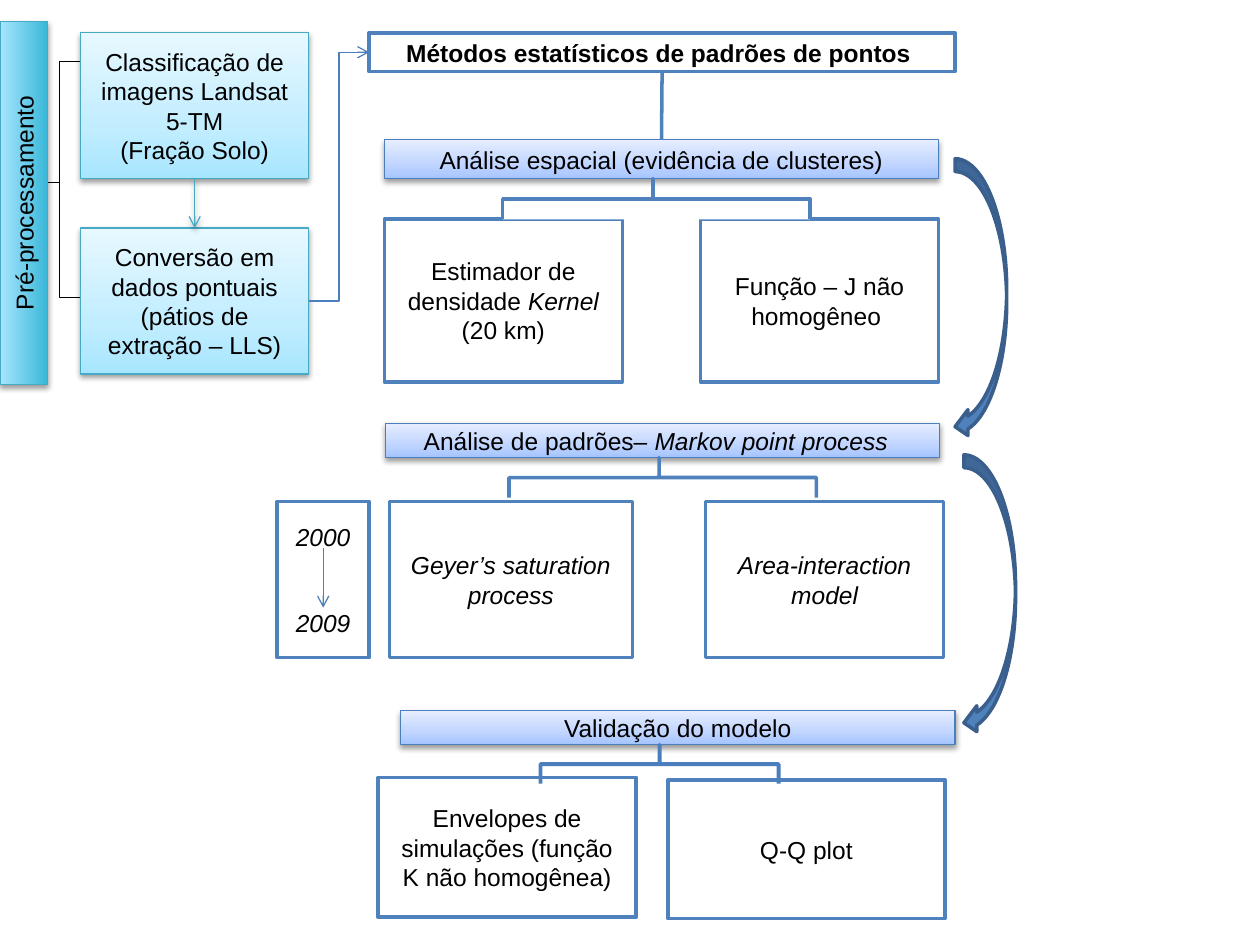
import pptx
import pptx.util
from lxml import etree
from copy import deepcopy
from pptx.dml.color import RGBColor
from pptx.enum.shapes import MSO_CONNECTOR, MSO_SHAPE
from pptx.enum.text import MSO_ANCHOR, PP_ALIGN
from pptx.oxml.ns import qn

BLACK = RGBColor(0x00, 0x00, 0x00)
WHITE = RGBColor(0xFF, 0xFF, 0xFF)
BLUE = RGBColor(0x4F, 0x81, 0xBD)
MID_BLUE = RGBColor(0x4B, 0x7E, 0xBC)
DARK_BLUE = RGBColor(0x3A, 0x5F, 0x8C)
TEAL = RGBColor(0x46, 0xAA, 0xC5)
# Gradient stops from bottom to top: (position, colour)
AQUA_STOPS = [(0, RGBColor(0xA7, 0xE6, 0xFF)), (0.35, RGBColor(0xC1, 0xED, 0xFF)),
              (1, RGBColor(0xE7, 0xF8, 0xFF))]
BLUE_STOPS = [(0, RGBColor(0xA4, 0xC4, 0xFF)), (0.35, RGBColor(0xBF, 0xD4, 0xFF)),
              (1, RGBColor(0xE6, 0xEE, 0xFF))]
DEEP_STOPS = [(0, RGBColor(0x39, 0xB7, 0xD8)), (1, RGBColor(0xA7, 0xE6, 0xFF))]

COLS, ROWS = 100, 75
WIDTH, HEIGHT = pptx.util.Inches(10), pptx.util.Inches(7.5)


def grid(x, y, w, h):
    """Turn columns and rows into slide lengths."""
    return [round(v * size / n) for v, size, n in
            ((x, WIDTH, COLS), (y, HEIGHT, ROWS), (w, WIDTH, COLS), (h, HEIGHT, ROWS))]


def turned(x, y, w, h):
    """Box that covers (x, y, w, h) after a quarter turn."""
    return x + (w - h) / 2, y + (h - w) / 2, h, w


def set_effects(shape, shadow=False):
    spPr = shape.element.spPr
    effects = spPr.find(qn("a:effectLst"))
    if effects is None:
        effects = etree.SubElement(spPr, qn("a:effectLst"))
    if shadow:
        outer = etree.SubElement(effects, qn("a:outerShdw"), blurRad="40000", dist="20000",
                                 dir="5400000", rotWithShape="0")
        color = etree.SubElement(outer, qn("a:srgbClr"), val=str(BLACK))
        etree.SubElement(color, qn("a:alpha"), val="38000")


def paint(shape, fill, line, width):
    """Fill with a colour, a list of gradient stops, or nothing."""
    if fill is None:
        shape.fill.background()
    elif isinstance(fill, list):
        shape.fill.gradient()
        shape.fill.gradient_angle = 90
        gs_lst = shape.element.spPr.find(".//" + qn("a:gsLst"))
        while len(gs_lst) < len(fill):
            gs_lst.append(deepcopy(gs_lst[0]))
        for stop, (position, color) in zip(shape.fill.gradient_stops, fill):
            stop.position, stop.color.rgb = position, color
    else:
        shape.fill.solid()
        shape.fill.fore_color.rgb = fill
    shape.line.color.rgb = line
    shape.line.width = pptx.util.Pt(width)
    set_effects(shape, shadow=isinstance(fill, list))


def write(shape, text, bold=False):
    """Centred text; asterisks switch italics on and off."""
    tf = shape.text_frame
    tf.word_wrap = True
    tf.vertical_anchor = MSO_ANCHOR.MIDDLE
    for i, line in enumerate(text.split("\n")):
        p = tf.add_paragraph() if i else tf.paragraphs[0]
        p.alignment = PP_ALIGN.CENTER
        p.font.name, p.font.size, p.font.bold = "Arial", pptx.util.Pt(14), bold
        p.font.color.rgb = BLACK
        for j, part in enumerate(line.split("*")):
            if part:
                r = p.add_run()
                r.text = part
                if j % 2:
                    r.font.italic = True


def add_box(s, box, text, fill=WHITE, line=BLUE, width=2):
    sp = s.shapes.add_shape(MSO_SHAPE.RECTANGLE, *grid(*box))
    paint(sp, fill, line, width)
    write(sp, text)
    return sp


def add_bracket(s, box, line, width, tip=0.512, fill=None, rotation=0):
    sp = s.shapes.add_shape(MSO_SHAPE.LEFT_BRACE, *grid(*(turned(*box) if rotation else box)))
    sp.rotation = rotation
    sp.adjustments[0], sp.adjustments[1] = 0, tip
    paint(sp, fill, line, width)


def add_link(s, line, width, start=None, end=None, points=(0, 0, 0, 0),
             kind=MSO_CONNECTOR.STRAIGHT, arrow=True, shadow=False):
    """Connector between (shape, side) pairs or between two grid points."""
    c = s.shapes.add_connector(kind, *grid(*points))
    if start:
        c.begin_connect(*start)
        c.end_connect(*end)
    c.line.color.rgb = line
    c.line.width = pptx.util.Pt(width)
    if arrow:
        etree.SubElement(c.line._get_or_add_ln(), qn("a:tailEnd"), type="arrow")
    set_effects(c, shadow)


def add_title(s, box, text):
    title = s.shapes.title
    title.left, title.top, title.width, title.height = grid(*box)
    paint(title, WHITE, BLUE, 2)
    write(title, text, bold=True)
    return title


def add_preprocessing(s, box):
    """Side label, bracket and two steps; returns the last step."""
    x, y, w, h = box
    add_bracket(s, (x + 2.4, y + 3.2, 4.7, 18.7), BLACK, 0.75)
    step_w, step_h = w - 6.4, 11.6
    steps = [add_box(s, (x + 6.4, y + dy, step_w, step_h), text, AQUA_STOPS, TEAL, 0.75)
             for dy, text in (
                 (0.9, "Classificação de imagens Landsat 5-TM\n(Fração Solo)"),
                 (16.4, "Conversão em dados pontuais\n(pátios de extração – LLS)"))]
    add_link(s, TEAL, 0.75, (steps[0], 2), (steps[1], 0), shadow=True)
    label = add_box(s, turned(x, y, 3.8, h), "Pré-processamento", DEEP_STOPS, TEAL, 0.75)
    label.rotation = 270
    return steps[1]


def add_analysis(s, box, heading, methods, bracket, bracket_style):
    """Heading bar with a bracket down to its methods, placed relative to the bar."""
    x, y, w, h = box
    for (dx, dy, mw, mh), text in methods:
        add_box(s, (x + dx, y + dy, mw, mh), text)
    bar = add_box(s, box, heading, BLUE_STOPS, MID_BLUE, 0.75)
    dx, bw, bh = bracket
    add_bracket(s, (x + dx, y + h, bw, bh), rotation=90, **bracket_style)
    return bar


def add_period(s, box):
    x, y, w, h = box
    sp = add_box(s, box, "*2000*\n*2009*")
    sp.text_frame.paragraphs[1].space_before = pptx.util.Pt(32)
    middle = x + w / 2
    c = (middle, y + 0.3 * h, middle, y + 0.68 * h)
    add_link(s, MID_BLUE, 0.75, points=c)


def add_curved_arrow(s, box):
    sp = s.shapes.add_shape(MSO_SHAPE.CURVED_LEFT_ARROW, *grid(*box))
    paint(sp, BLUE, DARK_BLUE, 2)


def main():
    prs = pptx.Presentation()
    prs.slide_width, prs.slide_height = WIDTH, HEIGHT
    s = prs.slides.add_slide(prs.slide_layouts[5])

    title = add_title(s, (29.3, 2.6, 46.5, 3.1), "Métodos estatísticos de padrões de pontos ")
    conversion = add_preprocessing(s, (0, 1.7, 24.5, 28.8))

    filled = dict(line=BLUE, width=2, fill=WHITE)
    spatial = add_analysis(
        s, (30.5, 11.1, 44, 3.1), "Análise espacial (evidência de clusteres)",
        [((0, 6.3, 18.9, 12.9), "Estimador de densidade *Kernel* (20 km)"),
         ((25.1, 6.3, 18.9, 12.9), "Função – J não homogêneo ")],
        (9.4, 24.4, 3.2), filled)
    add_analysis(
        s, (30.6, 33.6, 44, 2.7), "Análise de padrões– *Markov point process  *",
        [((0.3, 6.2, 19.3, 12.4), "*Geyer’s saturation process*"),
         ((25.4, 6.2, 18.9, 12.4), "*Area-interaction model*")],
        (9.8, 24.4, 3.2), filled)
    add_analysis(
        s, (31.8, 56.4, 44, 2.7), "Validação do modelo",
        [((-1.8, 5.3, 20.5, 11.1), "Envelopes de simulações (função K não homogênea)"),
         ((21.2, 5.5, 22, 11), "Q-Q plot")],
        (11.1, 18.9, 3.1), dict(line=MID_BLUE, width=2.25, tip=0.5))

    add_period(s, (22, 39.8, 7.3, 12.4))
    add_link(s, BLUE, 2, (title, 2), (spatial, 0), arrow=False)
    add_link(s, MID_BLUE, 0.75, (conversion, 3), (title, 1), kind=MSO_CONNECTOR.ELBOW)
    for x, y in ((75.8, 12.6), (76.5, 36.1)):
        add_curved_arrow(s, (x, y, 4.1, 22.3))

    prs.save("out.pptx")


if __name__ == "__main__":
    main()
